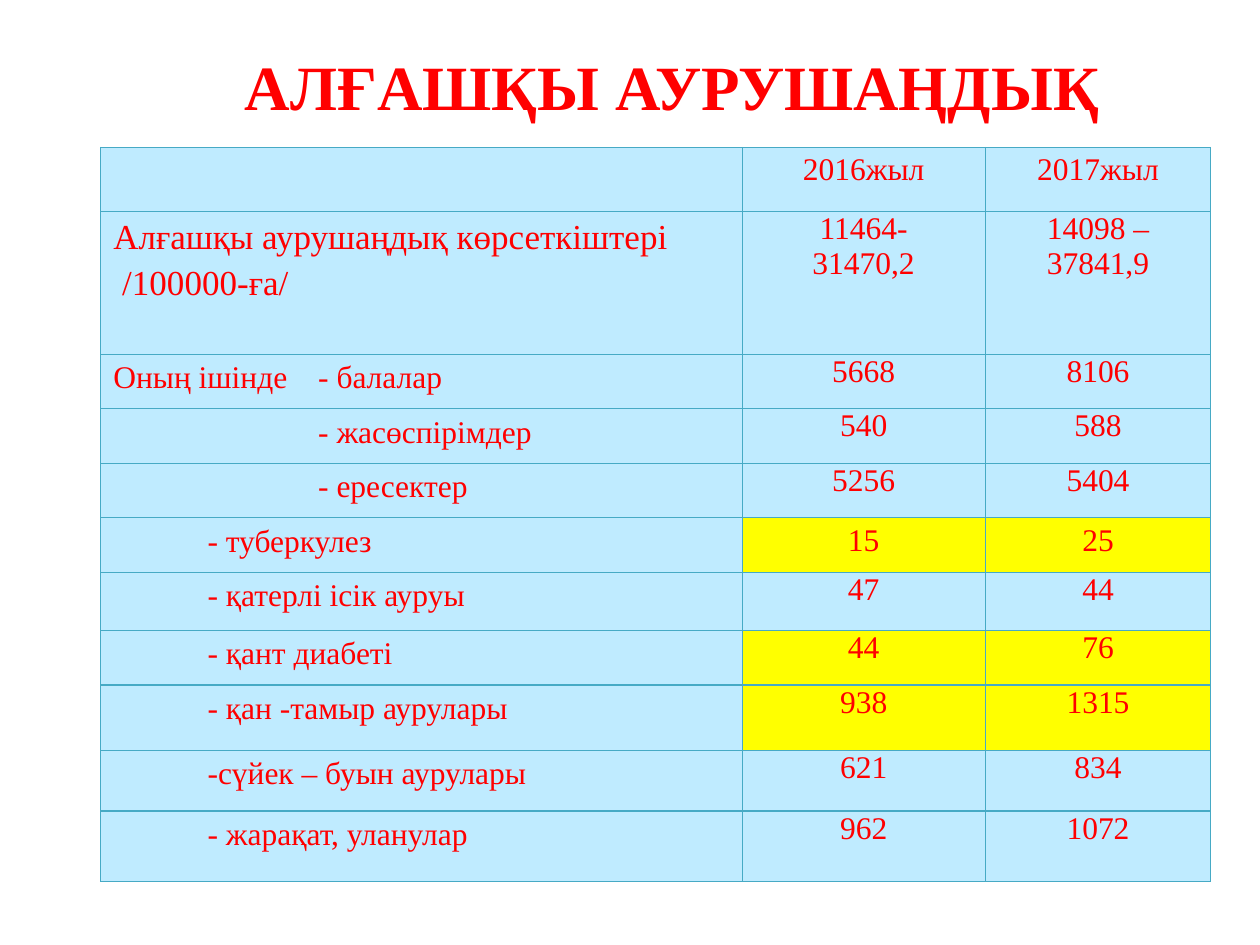
import pptx
import pptx.dml.color
import pptx.enum.text
import pptx.oxml
import pptx.oxml.ns
import pptx.util
from pptx.util import Cm

COLORS = {"text": "FF0000", "cell": "BFEBFF", "mark": "FFFF00", "border": "46AAC5"}
FONT = "Times New Roman"
CENTER = pptx.enum.text.PP_ALIGN.CENTER
LEFT = pptx.enum.text.PP_ALIGN.LEFT
GROUP_INDENT = Cm(4.13)
DISEASE_INDENT = Cm(1.9)
COLUMN_WIDTHS = [12.93, 4.9, 4.55]

# Each row: height, label lines as (text, indent), values, marked
ROWS = [
    (1.3, [], ["2016жыл", "2017жыл"], False),
    (2.87, [("Алғашқы аурушаңдық көрсеткіштері", 0), ("/100000-ға/", Cm(0.18))],
     ["11464-\n31470,2", "14098 – 37841,9"], False),
    (1.1, [("Оның ішінде\t- балалар", 0)], ["5668", "8106"], False),
    (1.1, [("- жасөспірімдер", GROUP_INDENT)], ["540", "588"], False),
    (1.1, [("- ересектер", GROUP_INDENT)], ["5256", "5404"], False),
    (1.1, [("- туберкулез", DISEASE_INDENT)], ["15", "25"], True),
    (1.17, [("- қатерлі ісік ауруы", DISEASE_INDENT)], ["47", "44"], False),
    (1.1, [("- қант диабеті", DISEASE_INDENT)], ["44", "76"], True),
    (1.32, [("- қан -тамыр аурулары", DISEASE_INDENT)], ["938", "1315"], True),
    (1.22, [("-сүйек – буын аурулары", DISEASE_INDENT)], ["621", "834"], False),
    (1.42, [("- жарақат, уланулар", DISEASE_INDENT)], ["962", "1072"], False),
]
SPACED_VALUES = {"2016жыл", "2017жыл", "15", "25"}


def color(name):
    return pptx.dml.color.RGBColor.from_string(COLORS[name])


def apply_format(target, values):
    for name, value in values.items():
        setattr(target, name, value)


def write_lines(frame, lines, size, para_format, bold=False):
    for index, (text, indent) in enumerate(lines):
        para = frame.paragraphs[0] if index == 0 else frame.add_paragraph()
        apply_format(para, para_format)
        if indent:
            properties = para._p.get_or_add_pPr()
            properties.set("marL", str(int(indent)))
            properties.set("indent", "0")
        span = para.add_run()
        span.text = text
        apply_format(span.font, {"name": FONT, "size": pptx.util.Pt(size), "bold": bold})
        span.font.color.rgb = color("text")
        if "\t" in text:
            add_tab_stop(para, GROUP_INDENT)


def add_tab_stop(para, position):
    stops = pptx.oxml.parse_xml(
        f'<a:tabLst {pptx.oxml.ns.nsdecls("a")}>'
        f'<a:tab pos="{int(position)}" algn="l"/></a:tabLst>')
    para._p.get_or_add_pPr().append(stops)


def style_cell(cell, fill_name):
    cell.fill.solid()
    cell.fill.fore_color.rgb = color(fill_name)
    properties = cell._tc.get_or_add_tcPr()
    for index, side in enumerate(["lnL", "lnR", "lnT", "lnB"]):
        properties.insert(index, pptx.oxml.parse_xml(
            f'<a:{side} {pptx.oxml.ns.nsdecls("a")} w="{pptx.util.Pt(0.75)}"><a:solidFill>'
            f'<a:srgbClr val="{COLORS["border"]}"/></a:solidFill></a:{side}>'))


def add_title(page, left, top, width, height):
    box = page.shapes.add_textbox(left, top, width, height)
    box.text_frame.word_wrap = True
    write_lines(box.text_frame, [("АЛҒАШҚЫ АУРУШАҢДЫҚ", 0)], 36, {"alignment": CENTER}, True)


def fill_label(cell, lines):
    size = 20 if len(lines) > 1 else 18
    para_format = {"alignment": LEFT, "space_before": pptx.util.Pt(size * 0.2)}
    write_lines(cell.text_frame, lines, size, para_format)


def fill_value(cell, text):
    apply_format(cell, {"margin_left": Cm(0.18), "margin_right": Cm(0.18),
                        "margin_top": 0, "margin_bottom": 0})
    para_format = {"alignment": CENTER}
    if text in SPACED_VALUES:
        para_format["line_spacing"] = 1.15
    write_lines(cell.text_frame, [(line, 0) for line in text.split("\n")], 18, para_format)


def add_morbidity_table(page, left, top, width, height):
    table = page.shapes.add_table(
        len(ROWS), len(COLUMN_WIDTHS), left, top, width, height).table
    apply_format(table, {"first_row": False, "horz_banding": False})
    for column, column_width in zip(table.columns, COLUMN_WIDTHS):
        column.width = Cm(column_width)
    for row, (row_height, label, values, marked) in zip(table.rows, ROWS):
        row.height = Cm(row_height)
        label_cell, *value_cells = row.cells
        style_cell(label_cell, "cell")
        fill_label(label_cell, label)
        for cell, text in zip(value_cells, values):
            style_cell(cell, "mark" if marked else "cell")
            fill_value(cell, text)


def main():
    deck = pptx.Presentation()
    apply_format(deck, {"slide_width": Cm(25.4), "slide_height": Cm(19.05)})
    page = deck.slides.add_slide(deck.slide_layouts[6])
    add_morbidity_table(page, Cm(2.03), Cm(2.97), Cm(sum(COLUMN_WIDTHS)),
                        Cm(sum(row[0] for row in ROWS)))
    add_title(page, Cm(-0.64), Cm(0.84), Cm(28.37), Cm(1.8))
    deck.save("out.pptx")


if __name__ == "__main__":
    main()
